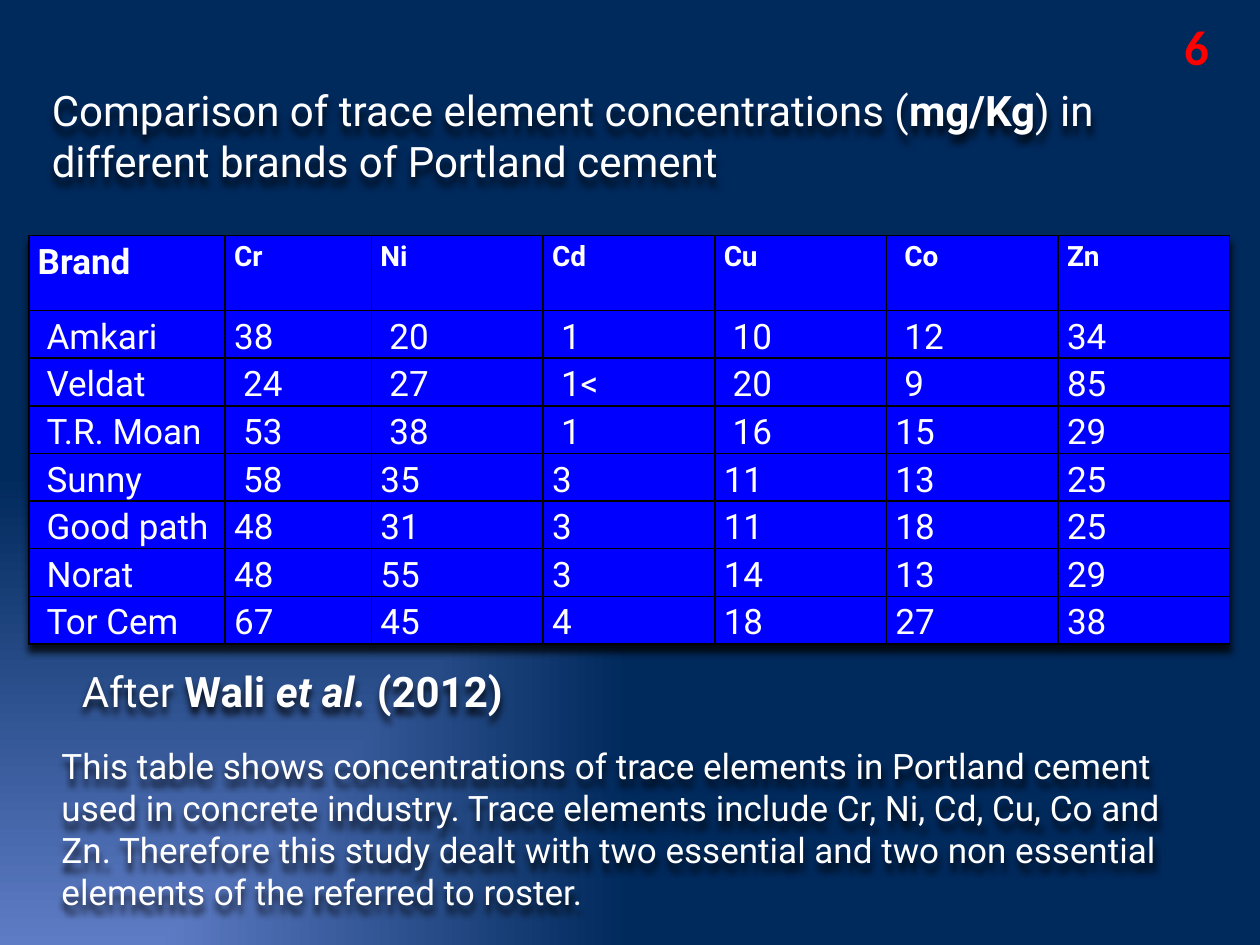
from lxml import etree
from pptx import Presentation
from pptx import util as u
from pptx.dml.color import RGBColor
from pptx.enum import text
from pptx.oxml import parse_xml
from pptx.oxml.ns import nsdecls, qn

WHITE = RGBColor(0xFF, 0xFF, 0xFF)
RED = RGBColor(0xFF, 0x00, 0x00)
CELL_BLUE = RGBColor(0x00, 0x00, 0xFF)
GLOW_BLUE = RGBColor(0x5E, 0x7C, 0xC5)
NAVY = RGBColor(0x00, 0x29, 0x5C)

SHADOW = (f'<a:effectLst {nsdecls("a")}>'
          '<a:outerShdw blurRad="50800" dist="50800" dir="5400000" algn="t" rotWithShape="0">'
          '<a:srgbClr val="000000"><a:alpha val="80000"/></a:srgbClr>'
          '</a:outerShdw></a:effectLst>')


def add_spans(para, spans, **base):
    """Add (wording, overrides) runs that share a base format."""
    color = base.pop("color", WHITE)
    for wording, changes in spans:
        span = para.add_run()
        span.text = wording
        span.font.color.rgb = color
        for name, value in {"name": "Roboto", "bold": False, **base, **changes}.items():
            setattr(span.font, name, value)


def set_frame(box, left, top, width, height, **settings):
    """Place a text shape and set up its frame."""
    place = {"left": left, "top": top, "width": width, "height": height}
    for name, value in place.items():
        setattr(box, name, u.Cm(value))
    for name, value in {"word_wrap": True, **settings}.items():
        setattr(box.text_frame, name, value)
    return box.text_frame.paragraphs[0]


deck = Presentation()
deck.slide_width, deck.slide_height = u.Cm(25.4), u.Cm(19.05)
page = deck.slides.add_slide(deck.slide_layouts[5])

# Background: glow from the lower left corner
fill = page.background.fill
fill.gradient()
for stop, color, position in zip(fill.gradient_stops, (GLOW_BLUE, NAVY), (0, 1)):
    stop.color.rgb = color
    stop.position = position
direction = next(page.background._cSld.iter(qn("a:lin")))
direction.getparent().replace(direction, parse_xml(
    f'<a:path {nsdecls("a")} path="rect">'
    '<a:fillToRect l="0" t="100000" r="100000" b="0"/></a:path>'))

# Title
title = page.shapes.title
para = set_frame(title, 0.79, 1.57, 23.42, 2.31,
                 vertical_anchor=text.MSO_ANCHOR.MIDDLE,
                 auto_size=text.MSO_AUTO_SIZE.NONE)
para.alignment = text.PP_ALIGN.LEFT
add_spans(para, [("Comparison of trace element concentrations (", {}),
                 ("mg/Kg", {"bold": True}),
                 (") in different brands of Portland cement", {})], size=u.Pt(24))

# Table: each row with the columns whose text is indented
rows = [
    (("Brand", "Cr", "Ni", "Cd", "Cu", "Co", "Zn"), {5}),
    (("Amkari", "38", "20", "1", "10", "12", "34"), {0, 2, 3, 4, 5}),
    (("Veldat", "24", "27", "1<", "20", "9", "85"), {0, 1, 2, 3, 4, 5}),
    (("T.R. Moan", "53", "38", "1", "16", "15", "29"), {0, 1, 2, 3, 4}),
    (("Sunny", "58", "35", "3", "11", "13", "25"), {0, 1}),
    (("Good path", "48", "31", "3", "11", "18", "25"), {0}),
    (("Norat", "48", "55", "3", "14", "13", "29"), {0}),
    (("Tor Cem", "67", "45", "4", "18", "27", "38"), {0}),
]
widths = [3.96, 2.95] + [3.46] * 5
heights = [1.51] + [0.96] * 7
frame = page.shapes.add_table(len(rows), len(widths), u.Cm(0.58), u.Cm(4.75),
                              u.Cm(sum(widths)), u.Cm(sum(heights)))
table = frame.table
table.first_row = table.horz_banding = False
table._tbl.tblPr.insert(0, parse_xml(SHADOW))
for column, width in zip(table.columns, widths):
    column.width = u.Cm(width)

for r, (values, indented) in enumerate(rows):
    table.rows[r].height = u.Cm(heights[r])
    for c, value in enumerate(values):
        cell = table.cell(r, c)
        margins = {"margin_left": 0.18, "margin_right": 0.18,
                   "margin_top": 0, "margin_bottom": 0}
        for name, margin in margins.items():
            setattr(cell, name, u.Cm(margin))
        for side in ("lnL", "lnR", "lnT", "lnB"):
            cell._tc.get_or_add_tcPr().append(parse_xml(
                f'<a:{side} {nsdecls("a")} w="12700"><a:solidFill>'
                f'<a:srgbClr val="000000"/></a:solidFill></a:{side}>'))
        cell.fill.solid()
        cell.fill.fore_color.rgb = CELL_BLUE
        para = cell.text_frame.paragraphs[0]
        para.line_spacing = 1.15
        if c in indented:
            para._p.get_or_add_pPr().set("marL", str(u.Cm(0.18)))
        size = 16 if r == 0 and c > 0 else 20
        add_spans(para, [(value, {})], size=u.Pt(size), bold=r == 0)

# Source line
citation = page.shapes.add_textbox(0, 0, 0, 0)
para = set_frame(citation, 1.4, 13.28, 11.3, 1.27,
                 vertical_anchor=text.MSO_ANCHOR.MIDDLE)
add_spans(para, [("After ", {}), ("Wali ", {"bold": True}),
                 ("et al.", {"bold": True, "italic": True}),
                 (" (2012)", {"bold": True})], size=u.Pt(24))

# Explanation
explanation = page.shapes.add_textbox(0, 0, 0, 0)
para = set_frame(explanation, 0.99, 14.88, 23.22, 3.68)
add_spans(para, [("This table shows concentrations of trace elements in Portland cement "
                  "used in concrete industry. Trace elements include Cr, Ni, Cd, Cu, Co "
                  "and Zn. Therefore this study dealt with two essential and two non "
                  "essential elements of the referred to roster.", {})], size=u.Pt(20))

# Soft shadow behind the wording
for box in (title, citation, explanation):
    box._element.spPr.append(parse_xml(SHADOW))

# Page number
number = page.shapes.add_textbox(0, 0, 0, 0)
para = set_frame(number, 23.62, 0.2, 1.02, 1.45, word_wrap=False)
add_spans(para, [("6", {})], name="Calibri", size=u.Pt(28), bold=True, color=RED)

deck.save("out.pptx")
